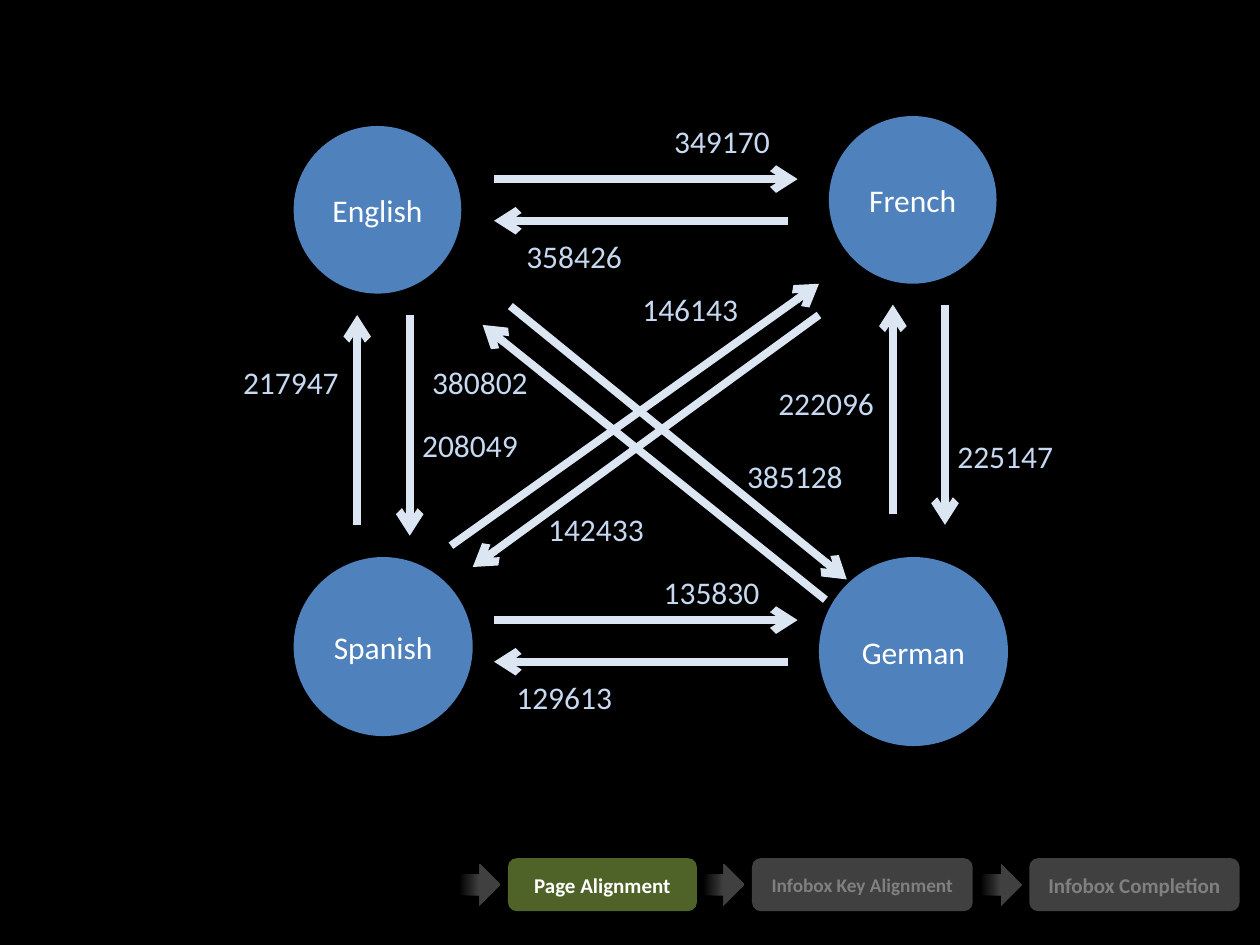
import pptx
import pptx.dml.color
import pptx.enum.shapes
import pptx.enum.text
import pptx.oxml.ns
import pptx.util
from lxml import etree

Cm = pptx.util.Cm
Pt = pptx.util.Pt
RGBColor = pptx.dml.color.RGBColor
Shape = pptx.enum.shapes.MSO_SHAPE
Align = pptx.enum.text.PP_ALIGN
Anchor = pptx.enum.text.MSO_ANCHOR

BLACK = RGBColor(0x00, 0x00, 0x00)
WHITE = RGBColor(0xFF, 0xFF, 0xFF)
BLUE = RGBColor(0x4F, 0x81, 0xBD)
PALE_LINE = RGBColor(0xDC, 0xE6, 0xF2)
PALE_TEXT = RGBColor(0xC6, 0xD9, 0xF1)
GREEN = RGBColor(0x4F, 0x62, 0x28)
DARK_GREY = RGBColor(0x40, 0x40, 0x40)
GREY = RGBColor(0x80, 0x80, 0x80)

# name, left, top, diameter
LANGUAGES = [
    ("English", 5.92, 2.54, 3.38),
    ("French", 16.71, 2.34, 3.38),
    ("Spanish", 5.92, 11.23, 3.61),
    ("German", 16.51, 11.23, 3.81),
]

# start x, start y, end x, end y, count, label left, label top
ALIGNMENTS = [
    (9.96, 3.61, 16.08, 3.61, "349170", 13.34, 2.34),
    (15.88, 4.45, 9.96, 4.45, "358426", 10.36, 4.65),
    (9.96, 12.5, 16.08, 12.5, "135830", 13.13, 11.43),
    (15.88, 13.34, 9.96, 13.34, "129613", 10.16, 13.54),
    (8.26, 6.35, 8.26, 10.8, "208049", 8.26, 8.46),
    (7.2, 10.58, 7.2, 6.35, "217947", 4.65, 7.19),
    (19.05, 6.14, 19.05, 10.58, "225147", 19.05, 8.69),
    (18, 10.37, 18, 6.14, "222096", 15.44, 7.62),
    (10.29, 6.17, 17.07, 11.68, "385128", 14.81, 9.09),
    (16.51, 6.35, 9.53, 11.43, "142433", 10.8, 10.16),
    (9.09, 11, 16.51, 5.72, "146143", 12.7, 5.72),
    (16.64, 12.09, 9.73, 6.55, "380802", 8.46, 7.19),
]

# label, left, width, text size, fill, text colour
STEPS = [
    ("Page Alignment", 10.24, 3.81, 12, GREEN, WHITE),
    ("Infobox Key Alignment", 15.16, 4.45, 11, DARK_GREY, GREY),
    ("Infobox Completion", 20.75, 4.24, 12, DARK_GREY, GREY),
]


def write_text(shape, text, size=18, color=WHITE, bold=False, align=Align.CENTER):
    paragraph = shape.text_frame.paragraphs[0]
    paragraph.alignment = align
    run = paragraph.add_run()
    run.text = text
    run.font.name = "Calibri"
    run.font.size = Pt(size)
    run.font.bold = bold
    run.font.color.rgb = color


class Diagram:
    """Holds the shared style and the slide being drawn; lengths are in cm."""

    line_width = Pt(4.5)
    label_size = (3.18, 1.02)
    step_top, step_height = 17.3, 1.07
    step_arrow_size = 0.84
    step_arrow_offset = 0.99

    def __init__(self, slide):
        self.slide = slide
        background = slide.background.fill
        background.solid()
        background.fore_color.rgb = BLACK

    def add_plain_shape(self, kind, left, top, width, height, fill):
        shape = self.slide.shapes.add_shape(
            kind, Cm(left), Cm(top), Cm(width), Cm(height))
        shape.shadow.inherit = False
        shape.line.fill.background()
        shape.fill.solid()
        shape.fill.fore_color.rgb = fill
        shape.text_frame.vertical_anchor = Anchor.MIDDLE
        return shape

    def add_language(self, name, left, top, diameter):
        circle = self.add_plain_shape(
            Shape.OVAL, left, top, diameter, diameter, BLUE)
        write_text(circle, name)

    def add_arrow(self, start_x, start_y, end_x, end_y):
        arrow = self.slide.shapes.add_connector(
            pptx.enum.shapes.MSO_CONNECTOR.STRAIGHT,
            Cm(start_x), Cm(start_y), Cm(end_x), Cm(end_y))
        arrow.line.width = self.line_width
        arrow.line.color.rgb = PALE_LINE
        qn = pptx.oxml.ns.qn
        etree.SubElement(arrow.line._get_or_add_ln(), qn("a:tailEnd"), type="arrow")
        etree.SubElement(arrow._element.spPr, qn("a:effectLst"))

    def add_label(self, text, left, top):
        width, height = self.label_size
        box = self.slide.shapes.add_textbox(
            Cm(left), Cm(top), Cm(width), Cm(height))
        box.text_frame.word_wrap = True
        write_text(box, text, color=PALE_TEXT, align=Align.LEFT)

    def add_step(self, text, left, width, size, fill, color):
        """Add a step of the process with the fading arrow that leads to it."""
        side = self.step_arrow_size
        arrow = self.add_plain_shape(
            Shape.RIGHT_ARROW, left - self.step_arrow_offset,
            self.step_top + (self.step_height - side) / 2, side, side, DARK_GREY)
        arrow.fill.gradient()
        arrow.fill.gradient_angle = 0
        stops = arrow.fill.gradient_stops
        for stop, position, shade in zip(stops, (0, 0.5), (BLACK, DARK_GREY)):
            stop.position = position
            stop.color.rgb = shade

        box = self.add_plain_shape(
            Shape.ROUNDED_RECTANGLE, left, self.step_top, width,
            self.step_height, fill)
        box.text_frame.margin_left = box.text_frame.margin_right = 0
        write_text(box, text, size=size, color=color, bold=True)


def main():
    presentation = pptx.Presentation()
    presentation.slide_width = Cm(25.4)
    presentation.slide_height = Cm(19.05)
    blank_layout = presentation.slide_layouts[6]
    diagram = Diagram(presentation.slides.add_slide(blank_layout))

    for step in STEPS:
        diagram.add_step(*step)
    for language in LANGUAGES:
        diagram.add_language(*language)
    for *ends, count, left, top in ALIGNMENTS:
        diagram.add_arrow(*ends)
        diagram.add_label(count, left, top)

    presentation.save("out.pptx")


if __name__ == "__main__":
    main()
